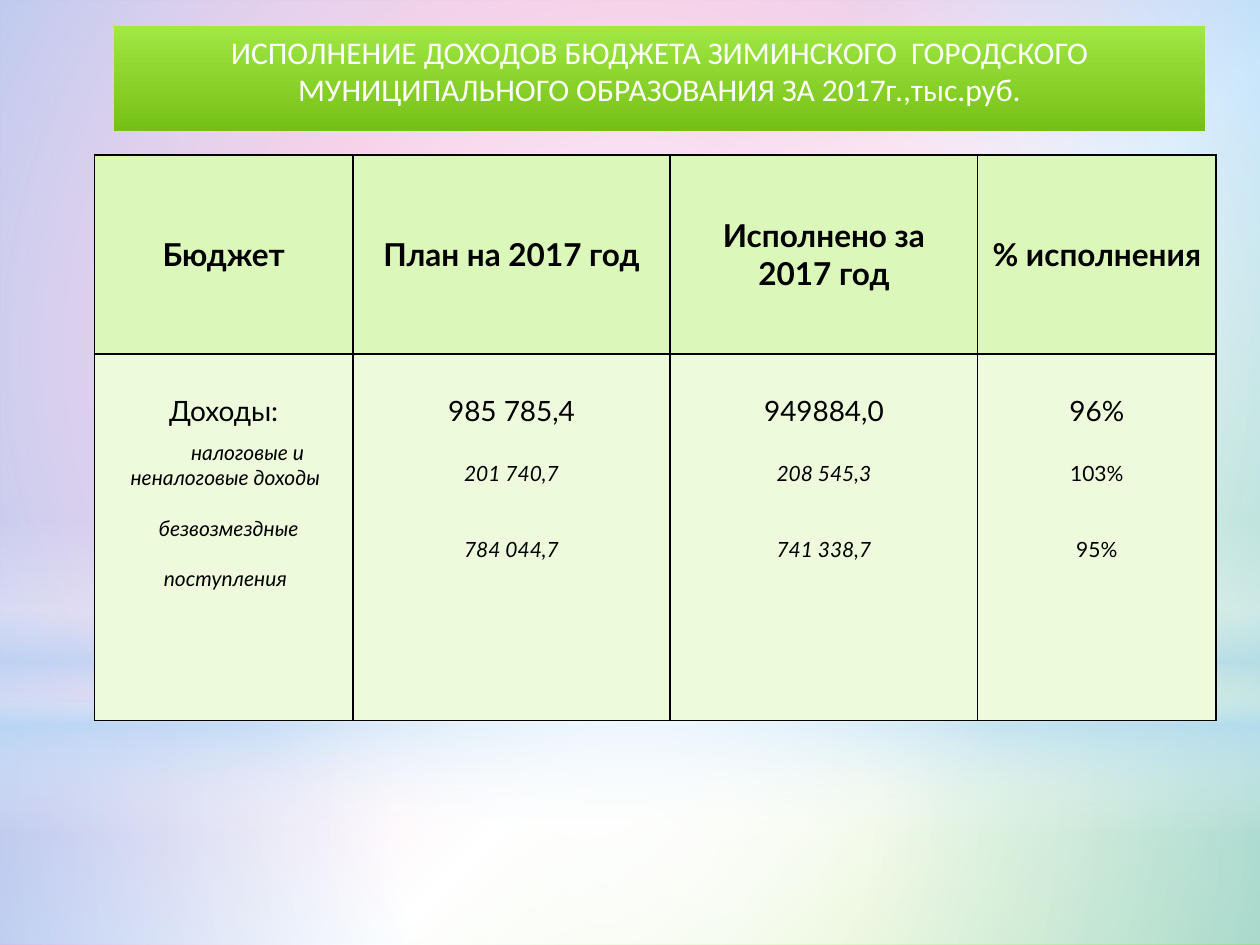
from dataclasses import dataclass

from lxml.etree import SubElement
from pptx import Presentation
from pptx.dml.color import RGBColor
from pptx.enum.shapes import MSO_SHAPE as Preset
from pptx.enum.text import MSO_ANCHOR as Anchor, MSO_AUTO_SIZE as AutoSize, PP_ALIGN as Align
from pptx.oxml.ns import qn
from pptx.util import Pt


@dataclass
class Gradient:
    stops: list[tuple[int, str, int]]  # position %, colour, opacity %
    angle: int | None = None  # None means a circle from the centre


@dataclass
class Glow:
    top: float
    height: float
    preset: Preset
    gradient: Gradient


@dataclass
class Line:
    text: str
    size: float = 12
    italic: bool = True
    bold: bool = False
    before: float = 0
    left: float = 0


WIDTH, HEIGHT = 720, 540
WHITE, SKY, BLACK = "FFFFFF", "B4DCFA", "000000"
BACKDROP = Gradient([(39, "EA8AC8", 100), (60, WHITE, 100), (100, "81D31A", 100)], 45)
BANNER = Gradient([(0, "A0E844", 100), (100, "75C016", 100)], 90)
GLOWS = [
    Glow(402, 138, Preset.RECTANGLE, Gradient([(0, WHITE, 91), (37, WHITE, 76), (100, SKY, 79)])),
    Glow(0, 402, Preset.RECTANGLE, Gradient([(0, WHITE, 89), (48, WHITE, 62), (100, SKY, 79)])),
    Glow(297, 180, Preset.RECTANGLE, Gradient(
        [(0, WHITE, 0), (29, WHITE, 30), (45, SKY, 40), (55, WHITE, 26), (65, SKY, 60), (100, WHITE, 0)], 90)),
    Glow(126, 402, Preset.OVAL, Gradient([(0, WHITE, 100), (56, WHITE, 0)])),
]

COLUMN_WIDTHS = [147.6, 181.4, 175.7, 136.1]
ROW_HEIGHTS = [113.8, 209.5]
HEADINGS = ["Бюджет", "План на 2017 год", "Исполнено за 2017 год", "% исполнения"]
INCOME_LABELS = [
    Line("Доходы:", 16, italic=False),
    Line("налоговые и", before=7.2, left=27.4),
    Line("неналоговые доходы", left=2),
    Line("безвозмездные", before=14.4, left=5.7),
    Line("поступления", before=14.4, left=2),
]
# Total, tax and non-tax income, transfers; italic parts or not
FIGURES = [
    ("985 785,4", "201 740,7", "784 044,7", True),
    ("949884,0", "208 545,3", "741 338,7", True),
    ("96%", "103%", "95%", False),
]


def rgb(colour: str) -> RGBColor:
    return RGBColor.from_string(colour)


def set_gradient(fill, holder, gradient: Gradient) -> None:
    fill.gradient()
    grad = holder.find(".//" + qn("a:gradFill"))
    for child in list(grad):
        grad.remove(child)
    stops = SubElement(grad, qn("a:gsLst"))
    for position, colour, opacity in gradient.stops:
        stop = SubElement(stops, qn("a:gs"), pos=str(position * 1000))
        value = SubElement(stop, qn("a:srgbClr"), val=colour)
        if opacity < 100:
            SubElement(value, qn("a:alpha"), val=str(opacity * 1000))
    if gradient.angle is None:
        circle = SubElement(grad, qn("a:path"), path="circle")
        SubElement(circle, qn("a:fillToRect"), {side: "50000" for side in "ltrb"})
    else:
        SubElement(grad, qn("a:lin"), ang=str(gradient.angle * 60000), scaled="0")


def add_glow(slide, glow: Glow) -> None:
    shape = slide.shapes.add_shape(glow.preset, 0, Pt(glow.top), Pt(WIDTH), Pt(glow.height))
    shape.shadow.inherit = False
    shape.line.fill.background()
    set_gradient(shape.fill, shape._element.spPr, glow.gradient)


def add_run(paragraph, text: str, font: str, size: float, colour: str,
            bold: bool = False, italic: bool = False) -> None:
    run = paragraph.add_run()
    run.text = text
    run.font.name, run.font.size = font, Pt(size)
    run.font.bold, run.font.italic = bold, italic
    run.font.color.rgb = rgb(colour)


def fill_cell(cell, lines: list[Line], colour: str) -> None:
    properties = cell._tc.get_or_add_tcPr()
    for side in ("lnL", "lnR", "lnT", "lnB"):
        border = SubElement(properties, qn("a:" + side), w=str(Pt(1)))
        SubElement(SubElement(border, qn("a:solidFill")), qn("a:srgbClr"), val=BLACK)
    cell.fill.solid()
    cell.fill.fore_color.rgb = rgb(colour)
    frame = cell.text_frame
    for index, line in enumerate(lines):
        paragraph = frame.add_paragraph() if index else frame.paragraphs[0]
        paragraph.alignment = Align.CENTER
        paragraph.space_before = Pt(line.before)
        if line.left:
            paragraph._p.get_or_add_pPr().set("marL", str(Pt(line.left)))
        add_run(paragraph, line.text, "Lato", line.size, BLACK, line.bold, line.italic)


def add_budget_table(slide) -> None:
    table = slide.shapes.add_table(2, 4, Pt(54), Pt(88.5), Pt(sum(COLUMN_WIDTHS)), Pt(sum(ROW_HEIGHTS))).table
    table.first_row = table.horz_banding = False
    for column, width in zip(table.columns, COLUMN_WIDTHS):
        column.width = Pt(width)
    for row, height in zip(table.rows, ROW_HEIGHTS):
        row.height = Pt(height)
    income = [INCOME_LABELS] + [
        [Line(total, 16, italic=False), Line(taxes, italic=slanted, before=19.2),
         Line(transfers, italic=slanted, before=28.8)]
        for total, taxes, transfers, slanted in FIGURES
    ]
    for index, (heading, lines) in enumerate(zip(HEADINGS, income)):
        head, body = table.cell(0, index), table.cell(1, index)
        head.vertical_anchor = Anchor.MIDDLE
        fill_cell(head, [Line(heading, 18, italic=False, bold=True)], "DCF7BA")
        body.margin_top = Pt(22.8)
        fill_cell(body, lines, "EDFBDC")


def add_heading(slide) -> None:
    heading = slide.shapes.title
    slide.shapes._spTree.append(heading._element)  # bring in front of the glows
    heading.left, heading.top, heading.width, heading.height = Pt(65.2), Pt(15), Pt(623.5), Pt(51)
    set_gradient(heading.fill, heading._element.spPr, BANNER)
    frame = heading.text_frame
    frame.word_wrap = True
    frame.auto_size = AutoSize.SHAPE_TO_FIT_TEXT
    frame.vertical_anchor = Anchor.TOP
    paragraph = frame.paragraphs[0]
    paragraph.alignment = Align.CENTER
    add_run(paragraph, "ИСПОЛНЕНИЕ ДОХОДОВ БЮДЖЕТА ЗИМИНСКОГО  ГОРОДСКОГО "
            "МУНИЦИПАЛЬНОГО ОБРАЗОВАНИЯ ЗА 2017г.,тыс.руб.", "Calibri", 18, WHITE)


def main() -> None:
    deck = Presentation()
    deck.slide_width, deck.slide_height = Pt(WIDTH), Pt(HEIGHT)
    slide = deck.slides.add_slide(deck.slide_layouts[5])

    # Pastel background
    set_gradient(slide.background.fill, slide._element, BACKDROP)
    for glow in GLOWS:
        add_glow(slide, glow)

    # Budget figures and banner
    add_budget_table(slide)
    add_heading(slide)
    deck.save("out.pptx")


if __name__ == "__main__":
    main()
